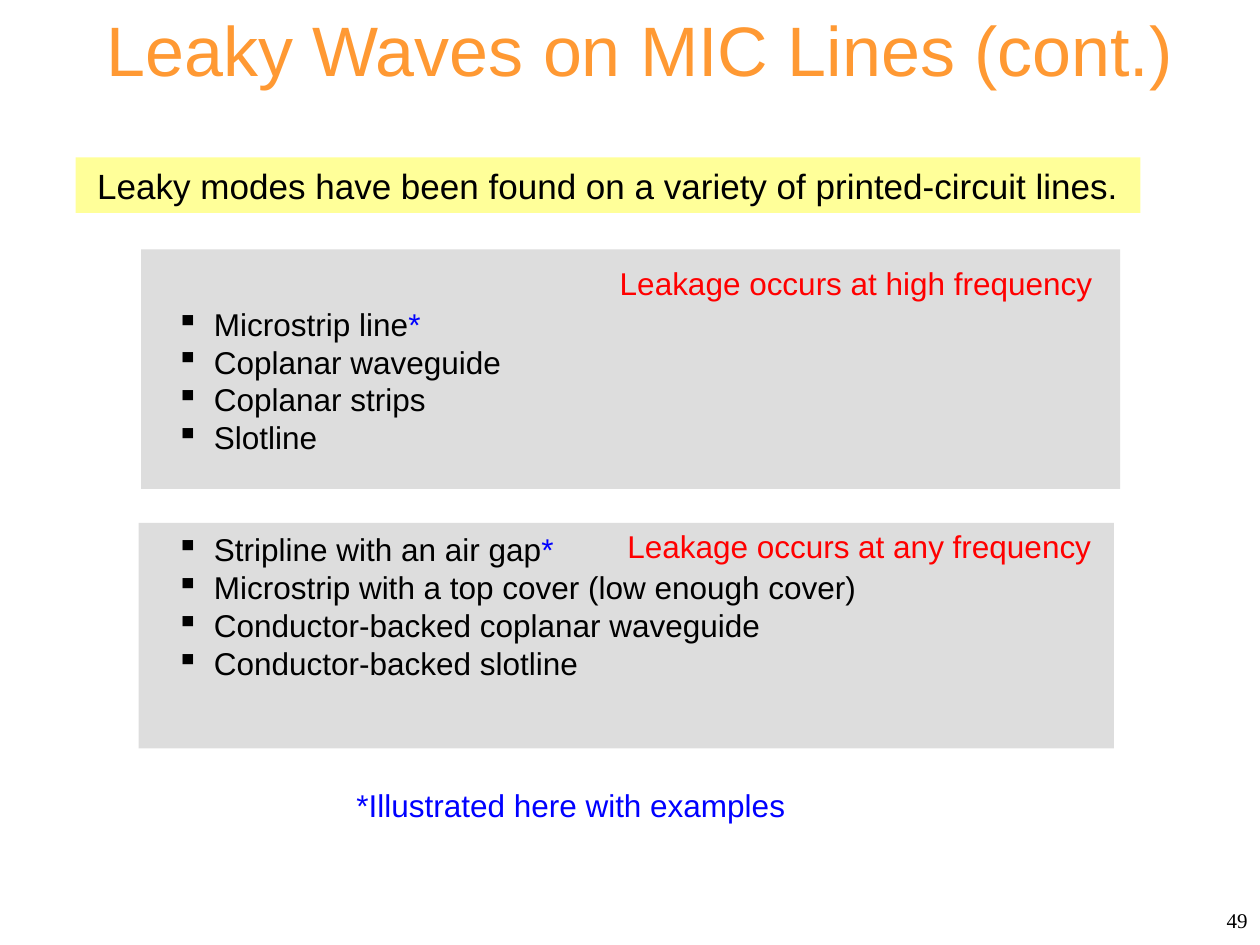
from pptx import Presentation
from pptx import util as u
from pptx.dml.color import RGBColor
from pptx.enum import shapes, text
from lxml import etree

ORANGE = RGBColor(0xFF, 0x99, 0x33)
YELLOW = RGBColor(0xFF, 0xFF, 0x99)
GREY = RGBColor(0xDD, 0xDD, 0xDD)
RED = RGBColor(0xFF, 0x00, 0x00)
BLUE = RGBColor(0x00, 0x00, 0xFF)
BLACK = RGBColor(0x00, 0x00, 0x00)

HIGH_FREQUENCY_LINES = [
    "Microstrip line*", "Coplanar waveguide", "Coplanar strips", "Slotline",
]
ANY_FREQUENCY_LINES = [
    "Stripline with an air gap*",
    "Microstrip with a top cover (low enough cover)",
    "Conductor-backed coplanar waveguide",
    "Conductor-backed slotline",
]


def format_font(font, size, color, name="Arial"):
    font.size = u.Pt(size)
    font.name = name
    font.color.rgb = color


def write_line(shape, words, size, color, align, name="Arial"):
    paragraph = shape.text_frame.paragraphs[0]
    paragraph.text = words
    paragraph.alignment = align
    format_font(paragraph.runs[0].font, size, color, name)


def add_title(slide, words):
    title = slide.shapes.title
    title.left, title.top = u.Inches(0.67), u.Inches(0)
    title.width, title.height = u.Inches(8.81), u.Inches(0.77)
    frame = title.text_frame
    frame.auto_size = text.MSO_AUTO_SIZE.NONE
    frame.vertical_anchor = text.MSO_ANCHOR.TOP
    write_line(title, words, 40, ORANGE, text.PP_ALIGN.CENTER)


def add_panel(slide, left, top, width, height, color):
    panel = slide.shapes.add_shape(
        shapes.MSO_SHAPE.RECTANGLE,
        u.Inches(left), u.Inches(top), u.Inches(width), u.Inches(height))
    panel.shadow.inherit = False
    panel.fill.solid()
    panel.fill.fore_color.rgb = color
    panel.line.fill.background()
    return panel


def add_text_box(slide, left, top, width, height, wrap=False):
    box = slide.shapes.add_textbox(
        u.Inches(left), u.Inches(top), u.Inches(width), u.Inches(height))
    box.text_frame.word_wrap = wrap
    return box


def add_label(slide, left, top, width, words, color):
    label = add_text_box(slide, left, top, width, 0.4)
    write_line(label, words, 18, color, text.PP_ALIGN.LEFT)


def set_bullet(paragraph, character, indent):
    properties = paragraph._p.get_or_add_pPr()
    properties.set("marL", str(indent))
    properties.set("indent", str(-indent))
    namespace = properties.nsmap["a"]
    bullet = etree.SubElement(properties, f"{{{namespace}}}buChar")
    bullet.set("char", character)


def add_bullet_list(slide, top, items):
    box = add_text_box(slide, 1.3, top, 5.8, 1.3, wrap=True)
    frame = box.text_frame
    for index, item in enumerate(items):
        paragraph = frame.paragraphs[0] if index == 0 else frame.add_paragraph()
        paragraph.line_spacing = u.Pt(21.6)
        set_bullet(paragraph, "▪", u.Inches(0.3))
        # A trailing star refers to the footnote and takes its colour
        name, star, _ = item.partition("*")
        for words, color in ((name, BLACK), (star, BLUE)):
            if words:
                run = paragraph.add_run()
                run.text = words
                format_font(run.font, 18, color)


def main():
    presentation = Presentation()
    presentation.slide_width = u.Inches(10)
    presentation.slide_height = u.Inches(7.5)
    slide = presentation.slides.add_slide(presentation.slide_layouts[5])

    # Title and key statement
    add_title(slide, "Leaky Waves on MIC Lines (cont.)")
    statement = add_panel(slide, 0.6, 1.25, 8.45, 0.44, YELLOW)
    write_line(statement,
               "Leaky modes have been found on a variety of printed-circuit lines.",
               20, BLACK, text.PP_ALIGN.CENTER)

    # Lines that leak at high frequency
    add_panel(slide, 1.12, 1.98, 7.77, 1.9, GREY)
    add_bullet_list(slide, 2.37, HIGH_FREQUENCY_LINES)
    add_label(slide, 4.82, 2.05, 3.99, "Leakage occurs at high frequency", RED)

    # Lines that leak at any frequency
    add_panel(slide, 1.1, 4.15, 7.74, 1.79, GREY)
    add_bullet_list(slide, 4.16, ANY_FREQUENCY_LINES)
    add_label(slide, 4.88, 4.13, 3.92, "Leakage occurs at any frequency", RED)

    # Footnote and page number
    add_label(slide, 2.73, 6.19, 3.64, "*Illustrated here with examples", BLUE)
    number = add_text_box(slide, 7.67, 7.1, 2.33, 0.4, wrap=True)
    number.text_frame.vertical_anchor = text.MSO_ANCHOR.MIDDLE
    write_line(number, "49", 12, BLACK, text.PP_ALIGN.RIGHT, "Times New Roman")

    presentation.save("out.pptx")


if __name__ == "__main__":
    main()
